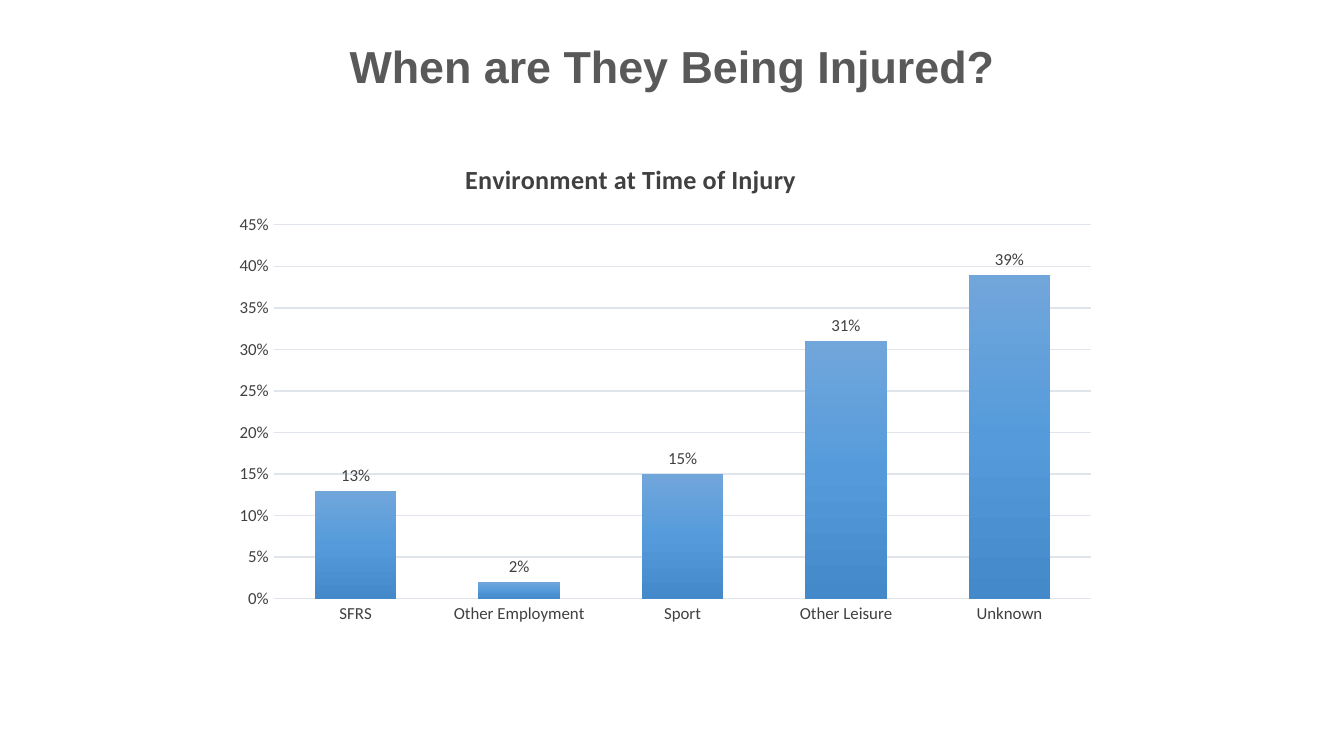
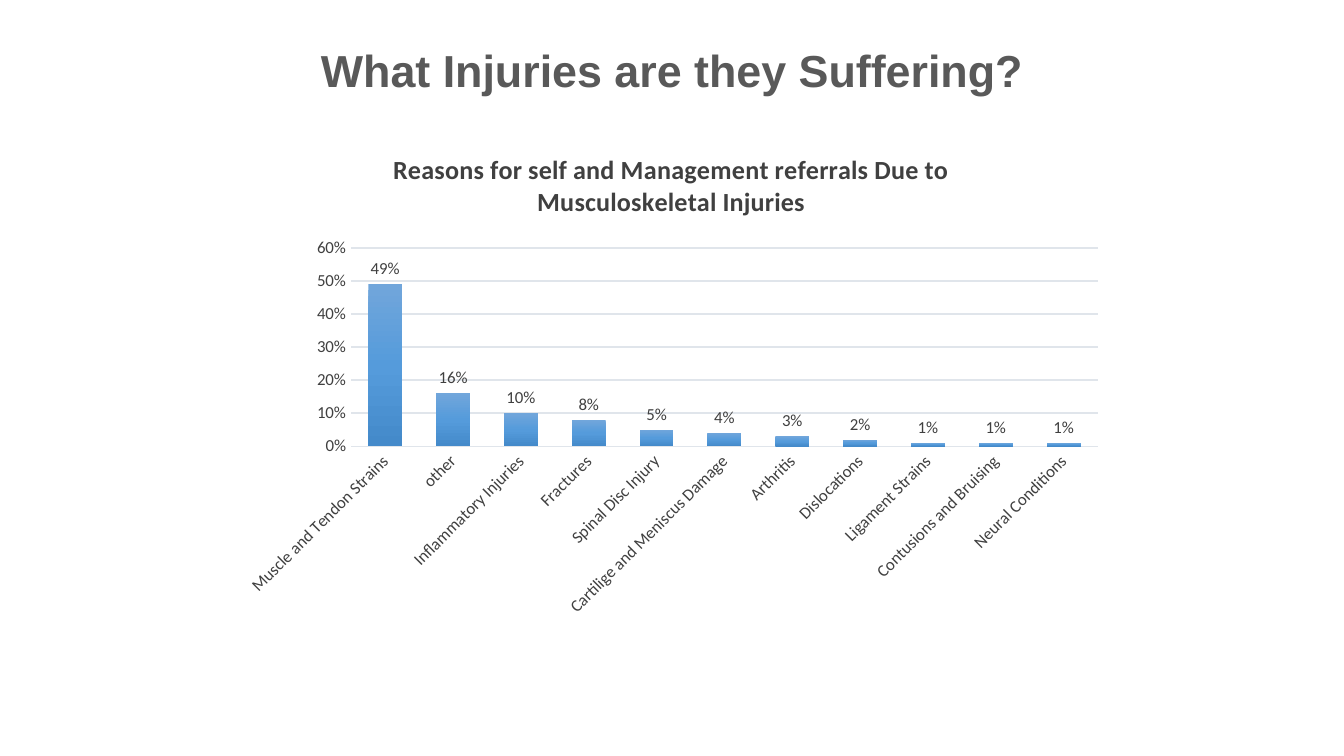
from dataclasses import dataclass
from typing import Any, Optional

import lxml.etree
import pptx
import pptx.chart.data
import pptx.dml.color
import pptx.enum.chart
import pptx.enum.text
import pptx.oxml.ns
import pptx.util
from pptx.util import Cm


# Shared look
@dataclass(frozen=True)
class Theme:
    heading_font: str = "Arial"
    chart_font: str = "Calibri"
    heading_color: str = "595959"
    text_color: str = "404040"
    grid_color: str = "E0E5EB"
    background: str = "FFFFFF"
    bar_gradient: tuple = ((0, "71A6DB"), (50, "559BDB"), (100, "448ACA"))
    heading_size: int = 24
    chart_title_size: int = 14
    chart_size: int = 10
    label_size: int = 9
    line_width: float = 0.75


THEME = Theme()


@dataclass(frozen=True)
class Box:
    left: float
    top: float
    width: float
    height: float

    def lengths(self) -> list:
        return [Cm(value) for value in (self.left, self.top, self.width, self.height)]


@dataclass(frozen=True)
class ChartSlide:
    heading: str
    heading_top: float
    chart_title: str
    chart_box: Box
    plot_area: Box  # fractions of the chart
    values: dict
    axis_maximum: float
    axis_step: float
    title_position: Optional[tuple] = None  # fractions of the chart
    label_angle: Optional[int] = None


SLIDES = [
    ChartSlide(
        heading="When are They Being Injured?",
        heading_top=-0.08,
        chart_title="Environment at Time of Injury",
        chart_box=Box(4.17, 2.67, 16.79, 9.3),
        plot_area=Box(0.06, 0.17, 0.92, 0.76),
        values={
            "SFRS": 0.13,
            "Other Employment": 0.02,
            "Sport": 0.15,
            "Other Leisure": 0.31,
            "Unknown": 0.39,
        },
        axis_maximum=0.45,
        axis_step=0.05,
        title_position=(0.27, 0.03),
    ),
    ChartSlide(
        heading="What Injuries are they Suffering?",
        heading_top=0,
        chart_title="Reasons for self and Management referrals Due to Musculoskeletal Injuries",
        chart_box=Box(4.29, 2.44, 16.79, 9.37),
        plot_area=Box(0.14, 0.24, 0.84, 0.4),
        values={
            "Muscle and Tendon Strains": 0.49,
            "other": 0.16,
            "Inflammatory Injuries": 0.1,
            "Fractures": 0.08,
            "Spinal Disc Injury": 0.05,
            "Cartilige and Meniscus Damage": 0.04,
            "Arthritis": 0.03,
            "Dislocations": 0.02,
            "Ligament Strains": 0.01,
            "Contusions and Bruising": 0.01,
            "Neural Conditions": 0.01,
        },
        axis_maximum=0.6,
        axis_step=0.1,
        label_angle=-45,
    ),
]


# Formatting helpers
def rgb(color: str) -> pptx.dml.color.RGBColor:
    return pptx.dml.color.RGBColor.from_string(color)


def set_font(font: Any, name: str, size: int, color: str, bold: bool = False) -> None:
    font.name = name
    font.size = pptx.util.Pt(size)
    font.bold = bold
    font.color.rgb = rgb(color)


def set_chart_font(font: Any, size: int, bold: bool = False) -> None:
    set_font(font, THEME.chart_font, size, THEME.text_color, bold)


def set_line(line: Any) -> None:
    line.color.rgb = rgb(THEME.grid_color)
    line.width = pptx.util.Pt(THEME.line_width)


def add_element(parent: Any, tag: str, value: Any) -> Any:
    return lxml.etree.SubElement(parent, pptx.oxml.ns.qn(tag), val=str(value))


def set_layout(parent: Any, settings: dict) -> None:
    """Place a chart title or plot area by fractions of the chart."""
    tag = pptx.oxml.ns.qn("c:layout")
    layout = parent.find(tag)
    if layout is None:
        layout = lxml.etree.Element(tag)
        parent.insert(0, layout)
    manual = lxml.etree.SubElement(layout, pptx.oxml.ns.qn("c:manualLayout"))
    for name, value in settings.items():
        add_element(manual, f"c:{name}", value)


def fill_bars(series: Any) -> None:
    fill = series.format.fill
    fill.gradient()
    fill.gradient_angle = 270
    stops = next(series._element.iter(pptx.oxml.ns.qn("a:gsLst")))
    for stop in list(stops):
        stops.remove(stop)
    for position, color in THEME.bar_gradient:
        stop = lxml.etree.SubElement(
            stops, pptx.oxml.ns.qn("a:gs"), pos=str(position * 1000)
        )
        add_element(stop, "a:srgbClr", color)


# Slide parts
def add_heading(slide: Any, content: ChartSlide) -> None:
    box = Box(1.75, content.heading_top, 21.9, 2.77)
    frame = slide.shapes.add_textbox(*box.lengths()).text_frame
    frame.word_wrap = True
    frame.vertical_anchor = pptx.enum.text.MSO_ANCHOR.MIDDLE
    paragraph = frame.paragraphs[0]
    paragraph.text = content.heading
    paragraph.alignment = pptx.enum.text.PP_ALIGN.CENTER
    paragraph.line_spacing = 0.9
    set_font(
        paragraph.font,
        THEME.heading_font,
        THEME.heading_size,
        THEME.heading_color,
        bold=True,
    )


def style_title(chart: Any, content: ChartSlide) -> None:
    chart.has_title = True
    title = chart.chart_title
    title.include_in_layout = False
    paragraph = title.text_frame.paragraphs[0]
    paragraph.text = content.chart_title
    set_chart_font(paragraph.font, THEME.chart_title_size, bold=True)
    if content.title_position:
        x, y = content.title_position
        set_layout(title._element, {"xMode": "edge", "yMode": "edge", "x": x, "y": y})


def style_axes(chart: Any, content: ChartSlide) -> None:
    for axis in (chart.category_axis, chart.value_axis):
        axis.major_tick_mark = pptx.enum.chart.XL_TICK_MARK.NONE
        axis.minor_tick_mark = pptx.enum.chart.XL_TICK_MARK.NONE
        set_chart_font(axis.tick_labels.font, THEME.label_size)

    category_axis = chart.category_axis
    set_line(category_axis.format.line)
    if content.label_angle is not None:
        body = next(category_axis._element.iter(pptx.oxml.ns.qn("a:bodyPr")))
        body.set("rot", str(content.label_angle * 60000))
        body.set("vert", "horz")

    value_axis = chart.value_axis
    value_axis.format.line.fill.background()
    value_axis.minimum_scale = 0
    value_axis.maximum_scale = content.axis_maximum
    value_axis.major_unit = content.axis_step
    value_axis.has_major_gridlines = True
    set_line(value_axis.major_gridlines.format.line)
    value_axis.tick_labels.number_format = "0%"
    value_axis.tick_labels.number_format_is_linked = False


def style_bars(chart: Any) -> None:
    plot = chart.plots[0]
    plot.gap_width = 100
    plot.overlap = -24
    plot.vary_by_categories = False
    fill_bars(plot.series[0])
    plot.has_data_labels = True
    labels = plot.data_labels
    labels.show_value = True
    labels.number_format = "0%"
    labels.number_format_is_linked = False
    labels.position = pptx.enum.chart.XL_LABEL_POSITION.OUTSIDE_END
    set_chart_font(labels.font, THEME.label_size)


def add_column_chart(slide: Any, content: ChartSlide) -> None:
    data = pptx.chart.data.CategoryChartData(number_format="0%")
    data.categories = list(content.values)
    data.add_series("Series 1", list(content.values.values()))
    chart = slide.shapes.add_chart(
        pptx.enum.chart.XL_CHART_TYPE.COLUMN_CLUSTERED,
        *content.chart_box.lengths(),
        data,
    ).chart
    chart.has_legend = False
    set_chart_font(chart.font, THEME.chart_size)
    style_title(chart, content)
    style_axes(chart, content)
    style_bars(chart)
    area = content.plot_area
    set_layout(
        next(chart._chartSpace.iter(pptx.oxml.ns.qn("c:plotArea"))),
        {
            "layoutTarget": "inner",
            "xMode": "edge",
            "yMode": "edge",
            "x": area.left,
            "y": area.top,
            "w": area.width,
            "h": area.height,
        },
    )


def main() -> None:
    presentation = pptx.Presentation()
    presentation.slide_width = Cm(25.4)
    presentation.slide_height = Cm(14.29)
    blank_layout = presentation.slide_layouts[6]
    for content in SLIDES:
        slide = presentation.slides.add_slide(blank_layout)
        slide.background.fill.solid()
        slide.background.fill.fore_color.rgb = rgb(THEME.background)
        add_heading(slide, content)
        add_column_chart(slide, content)
    presentation.save("out.pptx")


if __name__ == "__main__":
    main()
